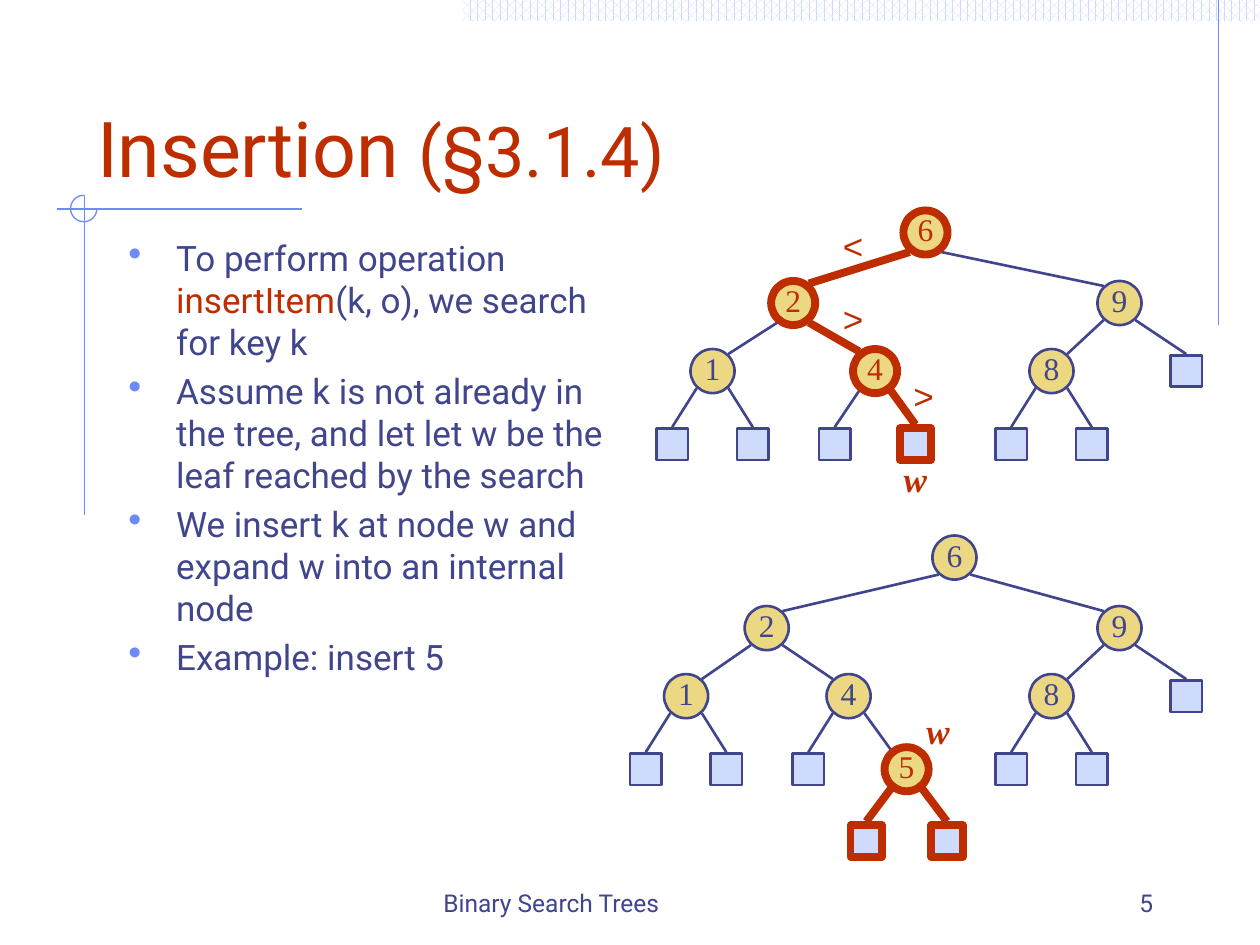
from dataclasses import dataclass

from pptx import Presentation
from pptx.dml.color import RGBColor
from pptx.enum import dml, shapes, text
from pptx.oxml import parse_xml
from pptx.oxml.ns import nsdecls
from pptx.util import Inches, Pt

NAVY, RED, BLUE, PALE, GOLD, WHITE = "40458C", "BE2D00", "6F89F7", "CFDBFD", "ECD882", "FFFFFF"
SHAPE, ALIGN, ANCHOR = shapes.MSO_SHAPE, text.PP_ALIGN, text.MSO_ANCHOR
CIRCLE, SQUARE = 0.35, 0.25
LEVELS = (0, 0.56, 1.1, 1.68, 2.25)  # depth of each tree level below the root


@dataclass
class Node:
    """A tree node by its centre x; a node without a key is an external leaf."""
    x: float
    key: str = ""
    children: tuple = ()
    hot: bool = False

    @property
    def color(self) -> str:
        return RED if self.hot else NAVY

    @property
    def reach(self) -> float:
        """Height above the centre at which an edge arrives."""
        if self.key:
            return 0.155 if self.hot else 0.135
        return SQUARE / 2 + (0.03 if self.hot else 0.01)


@dataclass
class Label:
    words: str
    left: float
    top: float
    width: float = 0.35
    font: str = "Arial"
    slanted: bool = False


def rgb(value: str) -> RGBColor:
    return RGBColor.from_string(value)


def style_font(font, name: str, size: float, color: str, **values) -> None:
    for key, value in {"name": name, "size": Pt(size), **values}.items():
        setattr(font, key, value)
    font.color.rgb = rgb(color)


def style_line(line, color: str, width: float) -> None:
    line.color.rgb = rgb(color)
    line.width = Pt(width)


def add_line(slide, start: tuple, end: tuple, color: str, width: float) -> None:
    line = slide.shapes.add_connector(
        shapes.MSO_CONNECTOR.STRAIGHT, *(Inches(value) for value in start + end))
    style_line(line.line, color, width)
    line._element.spPr.append(parse_xml(f"<a:effectLst {nsdecls('a')}/>"))


def add_shape(slide, kind, left: float, top: float, width: float, height: float):
    shape = slide.shapes.add_shape(kind, *map(Inches, (left, top, width, height)))
    shape.shadow.inherit = False
    return shape


def add_box(slide, left: float, top: float, width: float, height: float, **frame_values):
    box = slide.shapes.add_textbox(*map(Inches, (left, top, width, height)))
    for key, value in {"word_wrap": True, **frame_values}.items():
        setattr(box.text_frame, key, value)
    return box.text_frame


def add_span(para, words: str, name: str, size: float, color: str, **values) -> None:
    span = para.add_run()
    span.text = words
    style_font(span.font, name, size, color, **values)


def draw_node(slide, node: Node, y: float) -> None:
    size = CIRCLE if node.key else SQUARE
    shape = add_shape(slide, SHAPE.OVAL if node.key else SHAPE.RECTANGLE,
                      node.x - size / 2, y - size / 2, size, size)
    shape.fill.solid()
    shape.fill.fore_color.rgb = rgb(GOLD if node.key else PALE)
    style_line(shape.line, node.color, 4.5 if node.hot else 1.5)
    if node.key:
        frame_values = {"margin_left": 0, "margin_top": 0, "margin_right": 0,
                        "margin_bottom": Inches(0.05), "word_wrap": False,
                        "vertical_anchor": ANCHOR.MIDDLE}
        for key, value in frame_values.items():
            setattr(shape.text_frame, key, value)
        para = shape.text_frame.paragraphs[0]
        para.alignment = ALIGN.CENTER
        add_span(para, node.key, "Times New Roman", 18, node.color)


def draw_tree(slide, node: Node, root_y: float, depth: int = 0) -> None:
    y = root_y + LEVELS[depth]
    for child in node.children:
        side = 0.125 if child.x > node.x else -0.125
        hot = node.hot and child.hot
        end = (child.x - (side if child.key else 0),
               root_y + LEVELS[depth + 1] - child.reach)
        add_line(slide, (node.x + side, y + node.reach), end,
                 RED if hot else NAVY, 4.5 if hot else 1.5)
        # The right child of 9 is a leaf one level higher than the other leaves.
        draw_tree(slide, child, root_y, depth + 1)
    draw_node(slide, node, y)


def leaf_pair(x: float, hot_left: bool = False, hot_right: bool = False) -> tuple:
    return Node(x - 0.32, hot=hot_left), Node(x + 0.32, hot=hot_right)


def right_subtree() -> Node:
    return Node(8.885, "9", (Node(8.345, "8", leaf_pair(8.345)), Node(9.415)))


def draw_decoration(slide) -> None:
    band = add_shape(slide, SHAPE.RECTANGLE, 3.67, 0, 6.33, 0.17)
    band.fill.patterned()
    band.fill.pattern = dml.MSO_PATTERN.PERCENT_60
    band.fill.fore_color.rgb = rgb(PALE)
    band.fill.back_color.rgb = rgb(WHITE)
    band.line.fill.background()
    for start, end in (((9.67, 0), (9.67, 2.58)), ((2.4, 1.66), (0.45, 1.66)),
                       ((0.67, 1.55), (0.67, 4.09))):
        add_line(slide, start, end, BLUE, 0.75)
    arc = add_shape(slide, SHAPE.ARC, 0.56, 1.55, 0.21, 0.21)
    arc.adjustments[0], arc.adjustments[1] = 0, 162  # 0 to 270 degrees
    arc.fill.background()
    style_line(arc.line, BLUE, 0.75)


def draw_title(slide) -> None:
    title = slide.shapes.title
    placing = {"left": 0.67, "top": 0.33, "width": 8.5, "height": 1.25}
    for key, value in placing.items():
        setattr(title, key, Inches(value))
    title.text_frame.vertical_anchor = ANCHOR.BOTTOM
    title.text_frame.auto_size = text.MSO_AUTO_SIZE.NONE
    para = title.text_frame.paragraphs[0]
    para.alignment = ALIGN.LEFT
    for words, size in (("Insertion ", 44), ("(§3.1.4)", 40)):
        add_span(para, words, "Roboto", size, RED)


def draw_bullets(slide) -> None:
    bullets = (
        (("To perform operation ", NAVY), ("insertItem", RED),
         ("(k, o), we search for key k", NAVY)),
        (("Assume k is not already in the tree, and let let w be the leaf "
          "reached by the search", NAVY),),
        (("We insert k at node w and expand w into an internal node", NAVY),),
        (("Example: insert 5", NAVY),),
    )
    frame = add_box(slide, 0.92, 1.83, 4, 4.75)
    for index, spans in enumerate(bullets):
        para = frame.add_paragraph() if index else frame.paragraphs[0]
        para.space_before = Pt(4 if index else 0)
        props = para._p.get_or_add_pPr()
        props.set("marL", str(Inches(0.38)))
        props.set("indent", str(-Inches(0.38)))
        for mark in (f'<a:buClr {nsdecls("a")}><a:srgbClr val="{BLUE}"/></a:buClr>',
                     f'<a:buSzPct {nsdecls("a")} val="110000"/>',
                     f'<a:buChar {nsdecls("a")} char="•"/>'):
            props.append(parse_xml(mark))
        for words, color in spans:
            add_span(para, words, "Roboto", 20, color)


def main() -> None:
    deck = Presentation()
    deck.slide_width, deck.slide_height = Inches(10), Inches(7.5)
    slide = deck.slides.add_slide(deck.slide_layouts[5])
    draw_decoration(slide)
    draw_title(slide)
    draw_bullets(slide)

    for words, left, width, align in (("Binary Search Trees", 3.42, 3.17, ALIGN.LEFT),
                                      ("5", 7.17, 2.08, ALIGN.RIGHT)):
        frame = add_box(slide, left, 6.83, width, 0.5, vertical_anchor=ANCHOR.BOTTOM)
        frame.paragraphs[0].alignment = align
        add_span(frame.paragraphs[0], words, "Roboto", 14, NAVY)

    before = Node(7.345, "6", (
        Node(6.295, "2", (
            Node(5.655, "1", leaf_pair(5.655)),
            Node(6.945, "4", leaf_pair(6.945, hot_right=True), hot=True)), hot=True),
        right_subtree()), hot=True)
    inserted = Node(7.195, "5", leaf_pair(7.195, True, True), hot=True)
    after = Node(7.575, "6", (
        Node(6.085, "2", (
            Node(5.445, "1", leaf_pair(5.445)),
            Node(6.735, "4", (Node(6.415), inserted)))),
        right_subtree()))
    draw_tree(slide, before, 1.845)
    draw_tree(slide, after, 4.425)

    for label in (Label("<", 6.59, 1.73), Label(">", 6.59, 2.31), Label(">", 7.15, 2.92),
                  Label("w", 7.07, 3.58, 0.39, "Times New Roman", True),
                  Label("w", 7.25, 5.58, 0.39, "Times New Roman", True)):
        frame = add_box(slide, label.left, label.top, label.width, 0.43, word_wrap=False)
        frame.paragraphs[0].alignment = ALIGN.CENTER
        add_span(frame.paragraphs[0], label.words, label.font, 20, RED,
                 bold=label.slanted, italic=label.slanted)
    deck.save("out.pptx")


if __name__ == "__main__":
    main()
